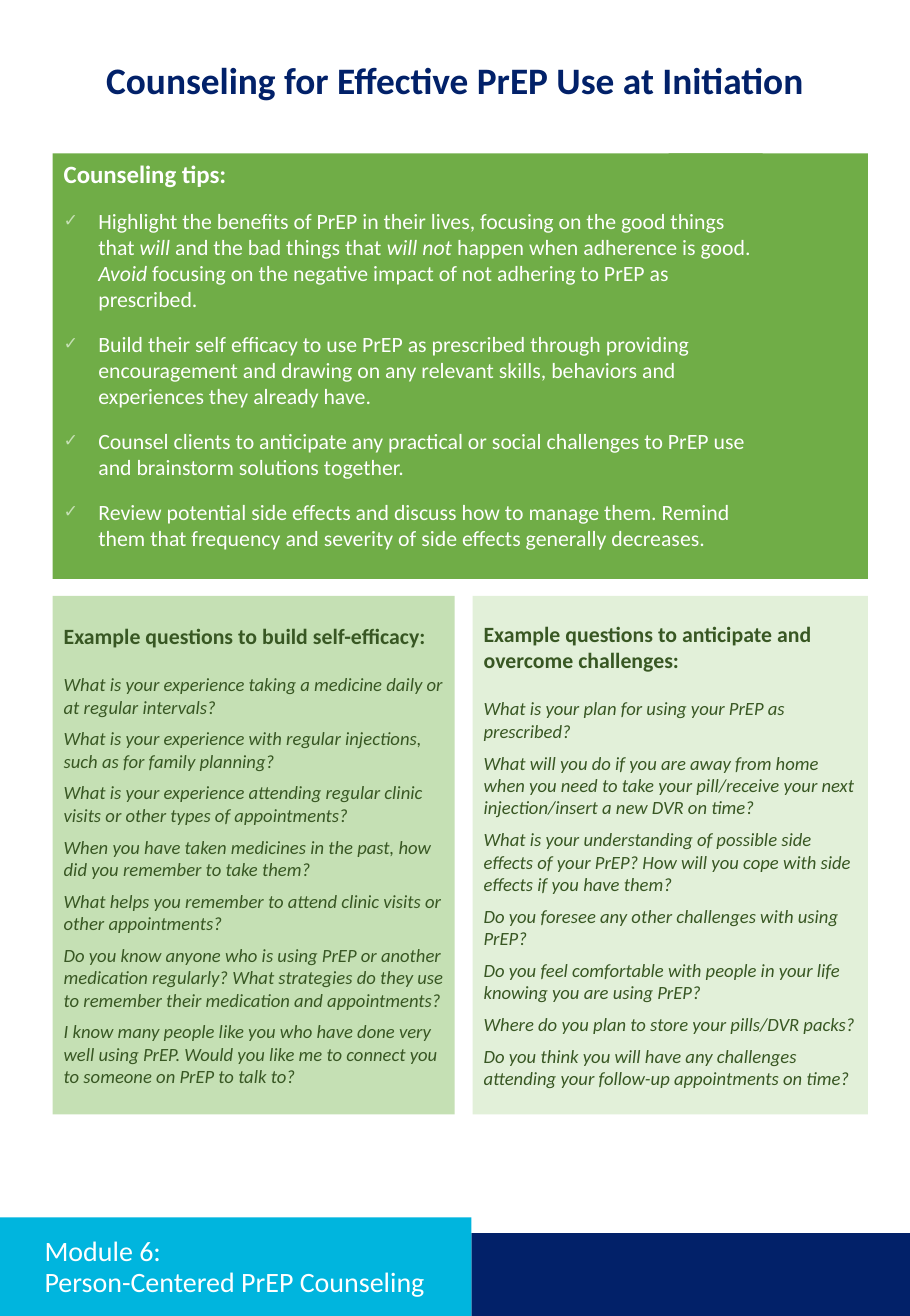
import pptx
import pptx.util
import pptx.dml.color
import pptx.enum.shapes
import pptx.enum.text
import pptx.oxml
import pptx.oxml.ns

Inches = pptx.util.Inches
Pt = pptx.util.Pt
ANCHOR = pptx.enum.text.MSO_ANCHOR
ALIGN = pptx.enum.text.PP_ALIGN

FONT = "Calibri"
COLORS = {
    "navy": "022169",
    "cyan": "00B5DE",
    "green": "70AD47",
    "mid_green": "C5E0B4",
    "pale_green": "E2F0D9",
    "dark_green": "385723",
    "white": "FFFFFF",
}
SLIDE_WIDTH, SLIDE_HEIGHT = 65 / 8, 11.75
LEFT, RIGHT, GAP = 0.47, 7.75, 0.16

TIPS = [
    ["Highlight the benefits of PrEP in their lives, focusing on the good things that ",
     "will ", "and the bad things that ", "will not",
     " happen when adherence is good. ", "Avoid",
     " focusing on the negative impact of not adhering to PrEP as prescribed."],
    ["Build their self efficacy to use PrEP as prescribed through providing encouragement "
     "and drawing on any relevant skills, behaviors and experiences they already have."],
    ["Counsel clients to anticipate any practical or social challenges to PrEP use "
     "and brainstorm solutions together."],
    ["Review potential side effects and discuss how to manage them. Remind them that "
     "frequency and severity of side effects generally decreases."],
]
EFFICACY = [
    "What is your experience taking a medicine daily or at regular intervals?",
    "What is your experience with regular injections, such as for family planning?",
    "What is your experience attending regular clinic visits or other types of appointments?",
    "When you have taken medicines in the past, how did you remember to take them?",
    "What helps you remember to attend clinic visits or other appointments?",
    "Do you know anyone who is using PrEP or another medication regularly? What strategies "
    "do they use to remember their medication and appointments?",
    "I know many people like you who have done very well using PrEP. Would you like me to "
    "connect you to someone on PrEP to talk to?",
]
CHALLENGES = [
    "What is your plan for using your PrEP as prescribed?",
    "What will you do if you are away from home when you need to take your pill/receive "
    "your next injection/insert a new DVR on time?",
    "What is your understanding of possible side effects of your PrEP? How will you cope "
    "with side effects if you have them?",
    "Do you foresee any other challenges with using PrEP?",
    "Do you feel comfortable with people in your life knowing you are using PrEP?",
    "Where do you plan to store your pills/DVR packs?",
    "Do you think you will have any challenges attending your follow-up appointments on time?",
]


def rgb(name):
    return pptx.dml.color.RGBColor.from_string(COLORS[name])


def add_panel(slide, box, fill, anchor=ANCHOR.TOP):
    sp = slide.shapes.add_shape(
        pptx.enum.shapes.MSO_SHAPE.RECTANGLE, *map(Inches, box))
    sp.shadow.inherit = False
    sp.fill.solid()
    sp.fill.fore_color.rgb = rgb(fill)
    sp.line.fill.background()
    tf = sp.text_frame
    tf.word_wrap = True
    tf.vertical_anchor = anchor
    return tf


def add_label(slide, box, anchor):
    tf = slide.shapes.add_textbox(*map(Inches, box)).text_frame
    tf.word_wrap = True
    tf.vertical_anchor = anchor
    return tf


def style(p, size, color, bold=False, italic=False, align=ALIGN.LEFT):
    p.alignment = align
    for r in p.runs:
        r.font.name = FONT
        r.font.size = Pt(size)
        r.font.color.rgb = rgb(color)
        r.font.bold = bold
        r.font.italic = italic


def add_check(p):
    pPr = p._p.get_or_add_pPr()
    pPr.set("marL", str(Inches(0.31)))
    pPr.set("indent", str(Inches(-0.31)))
    ns = pptx.oxml.ns.nsdecls("a")
    for xml in (
        f'<a:buClr {ns}><a:srgbClr val="{COLORS["mid_green"]}"/></a:buClr>',
        f'<a:buSzPct {ns} val="80000"/>',
        f'<a:buFont {ns} typeface="{FONT}"/>',
        f'<a:buChar {ns} char="✓"/>',
    ):
        pPr.append(pptx.oxml.parse_xml(xml))


def add_title(slide, box):
    p = add_label(slide, box, ANCHOR.TOP).paragraphs[0]
    p.text = "Counseling for Effective PrEP Use at Initiation"
    p.line_spacing = 0.9
    style(p, 24, "navy", bold=True, align=ALIGN.CENTER)


def add_tips(slide, box):
    left, top, width, height = box
    text_width = 6.34
    side_width = 1.78
    add_panel(slide, (left + width - side_width, top, side_width, height), "green")
    tf = add_panel(slide, (left, top, text_width, height), "green")
    p = tf.paragraphs[0]
    p.text = "Counseling tips:"
    p.space_after = Pt(6)
    style(p, 16, "white", bold=True)
    for tip in TIPS:
        p = tf.add_paragraph()
        add_check(p)
        p.space_before = p.space_after = Pt(6)
        for piece in tip:
            p.add_run().text = piece
        style(p, 14, "white")
        for r in p.runs[1::2]:
            r.font.italic = True


def add_questions(slide, box, fill, heading, questions):
    tf = add_panel(slide, box, fill, ANCHOR.MIDDLE)
    tf.margin_right = Inches(0.08)
    p = tf.paragraphs[0]
    p.text = heading
    p.space_after = Pt(15.5)
    style(p, 14, "dark_green", bold=True)
    for question in questions:
        p = tf.add_paragraph()
        p.text = question
        p.space_after = Pt(6)
        style(p, 12, "dark_green", italic=True)


def add_footer(slide, box):
    left, top, width, height = box
    split = 4.21
    add_panel(slide, (left + split, top + 0.14, width - split, height - 0.14), "navy")
    add_panel(slide, (left, top, split, height), "cyan")
    tf = add_label(slide, (left + 0.3, top + 0.2, 3.86, 0.5), ANCHOR.MIDDLE)
    tf.text = "Module 6:\nPerson-Centered PrEP Counseling"
    for p in tf.paragraphs:
        p.line_spacing = 0.9
        style(p, 18, "white")


def main():
    prs = pptx.Presentation()
    prs.slide_width, prs.slide_height = Inches(SLIDE_WIDTH), Inches(SLIDE_HEIGHT)
    slide = prs.slides.add_slide(prs.slide_layouts[6])
    add_footer(slide, (0, 10.87, SLIDE_WIDTH, SLIDE_HEIGHT - 10.87))
    add_title(slide, (0, 0.51, SLIDE_WIDTH, 0.71))
    add_tips(slide, (LEFT, 1.37, RIGHT - LEFT, 3.8))
    efficacy_width = 3.59
    challenges_left = LEFT + efficacy_width + GAP
    add_questions(slide, (LEFT, 5.32, efficacy_width, 4.63), "mid_green",
                  "Example questions to build self-efficacy:", EFFICACY)
    add_questions(slide, (challenges_left, 5.32, RIGHT - challenges_left, 4.63), "pale_green",
                  "Example questions to anticipate and overcome challenges:", CHALLENGES)
    prs.save("out.pptx")


if __name__ == "__main__":
    main()
